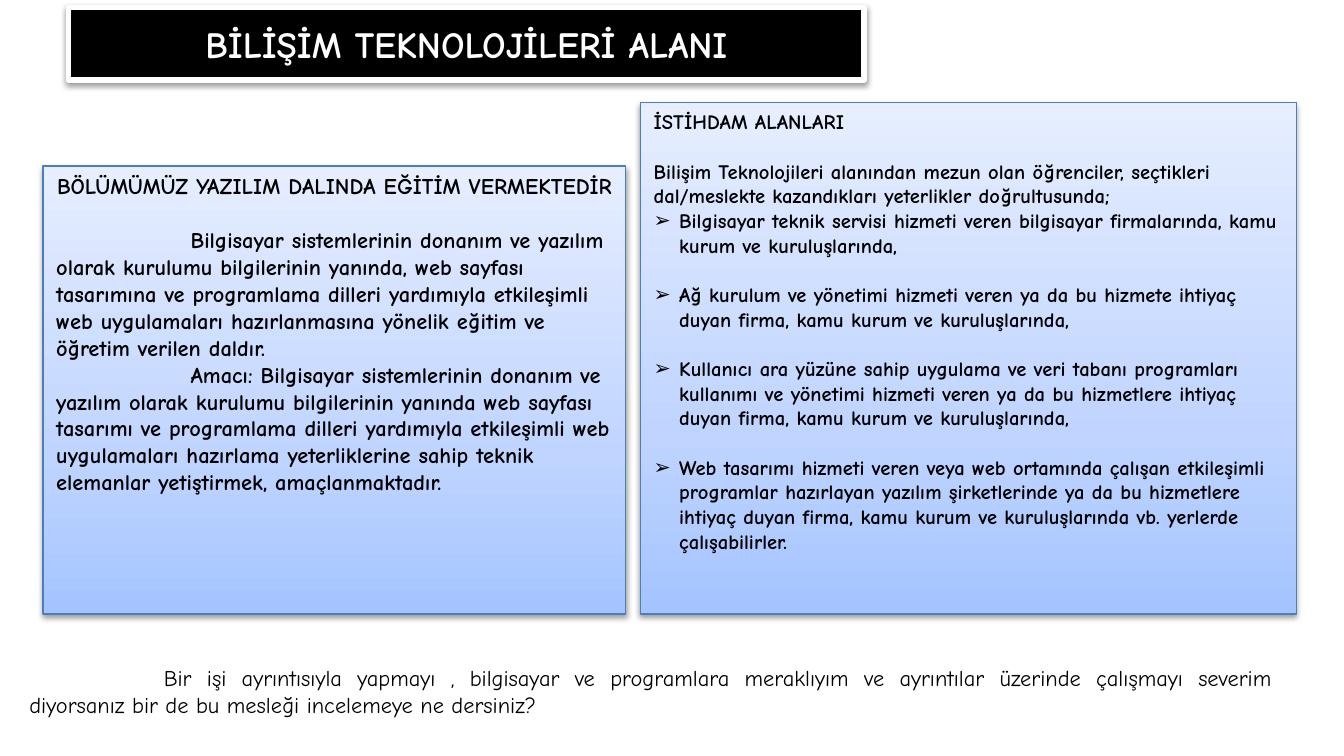
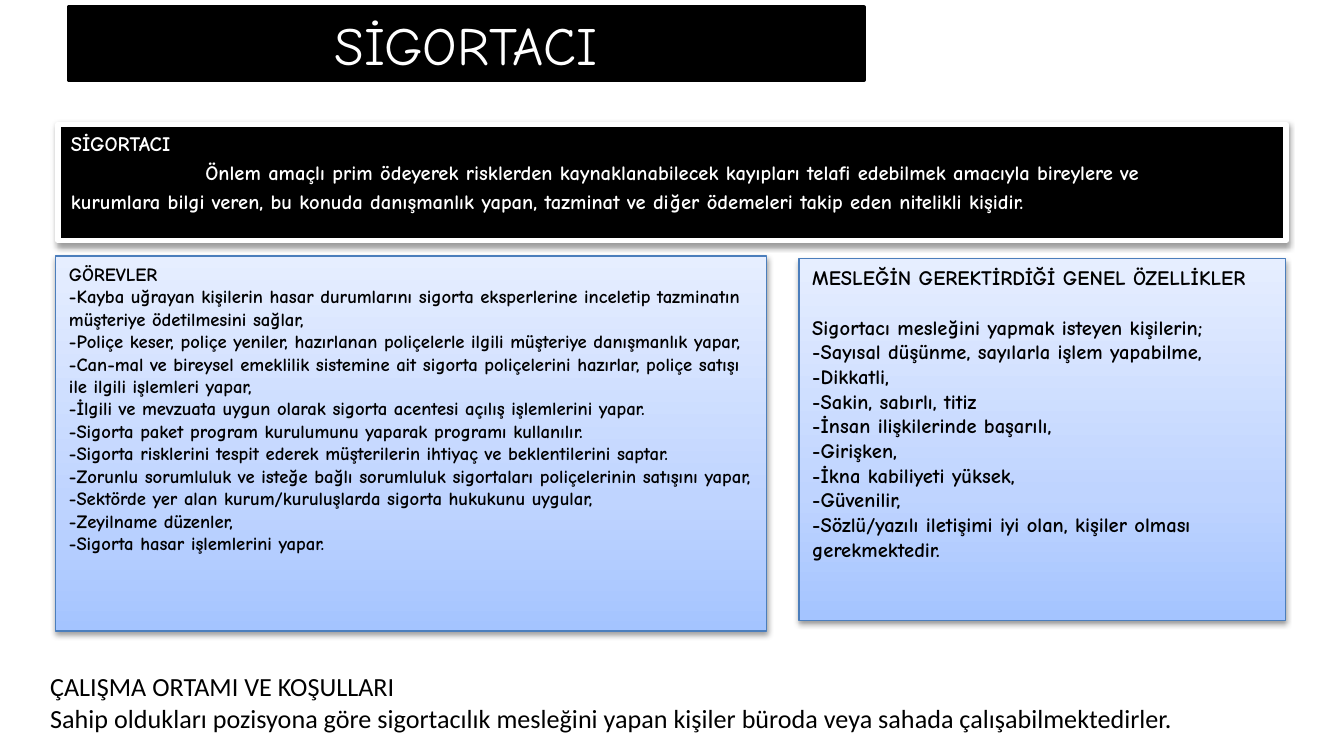
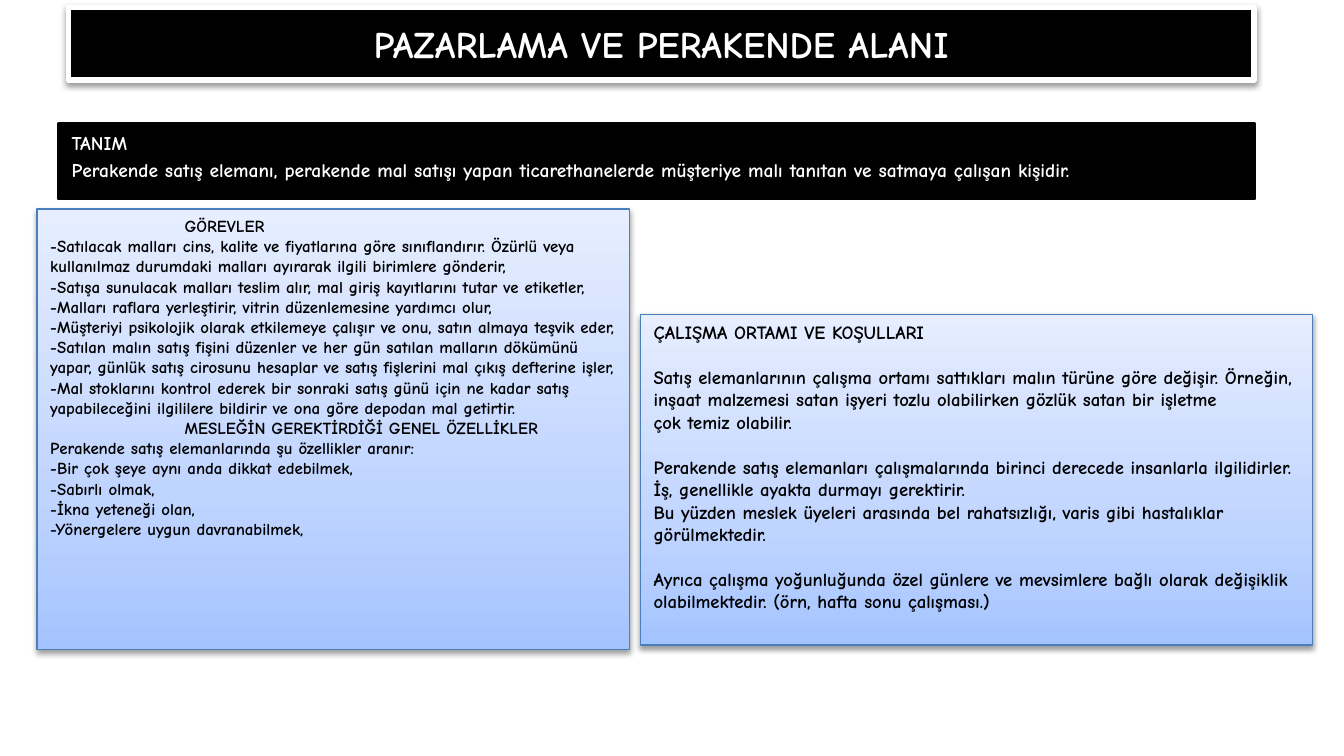
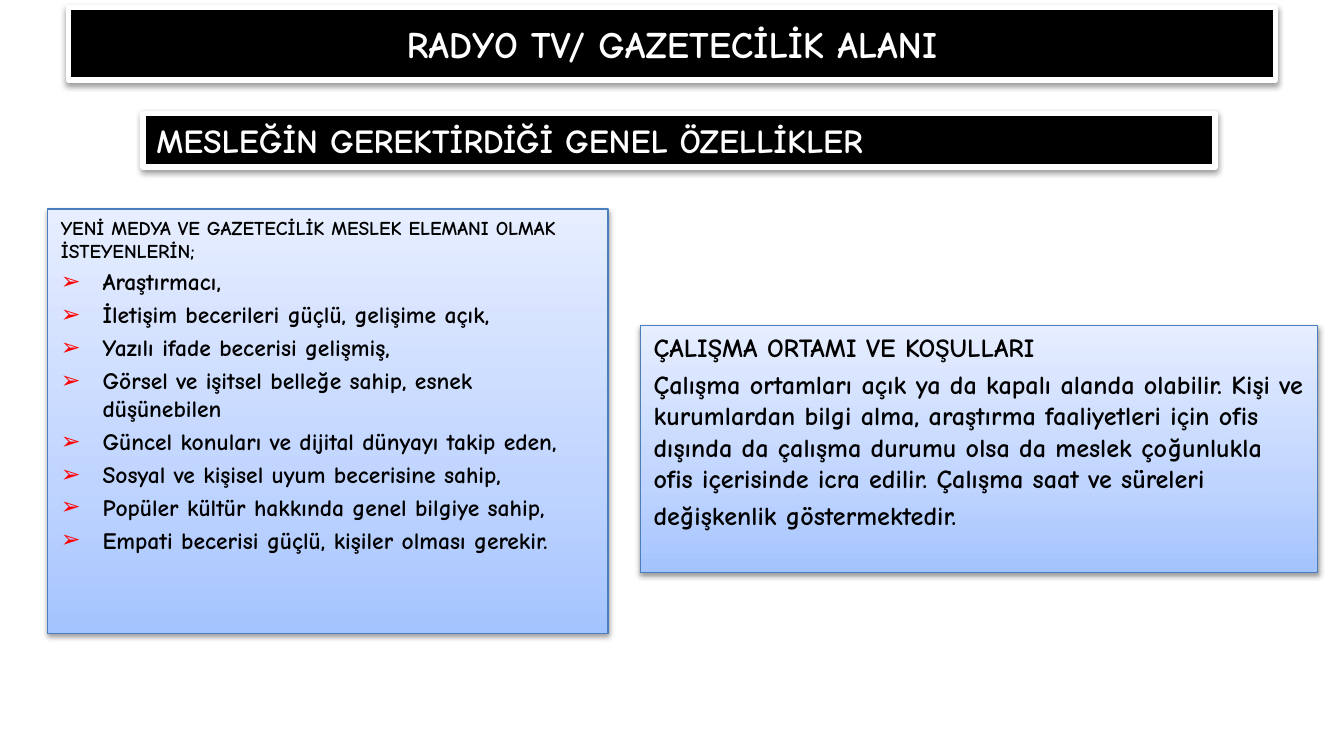
from dataclasses import dataclass
from typing import Optional

from lxml import etree
from pptx import Presentation
from pptx.dml.color import RGBColor
from pptx.enum.shapes import MSO_SHAPE
from pptx.enum.text import MSO_ANCHOR, PP_ALIGN
from pptx.oxml import parse_xml
from pptx.oxml.ns import nsdecls, qn
from pptx.util import Emu, Pt

RECT = MSO_SHAPE.RECTANGLE
TOP, MIDDLE = MSO_ANCHOR.TOP, MSO_ANCHOR.MIDDLE
LEFT, CENTER, JUSTIFY = PP_ALIGN.LEFT, PP_ALIGN.CENTER, PP_ALIGN.JUSTIFY

PX = 4572  # EMU in one px: 200 px to the inch
SLIDE_W, SLIDE_H = 2000, 1125


@dataclass(frozen=True)
class Theme:
    font: str = "Comic Neue"
    plain_font: str = "Calibri"
    black: str = "000000"
    white: str = "FFFFFF"
    edge: str = "4B7EBC"
    bullet: str = "FF0000"
    gradient: tuple = ((0, "A4C4FF"), (35, "BFD4FF"), (100, "E6EEFF"))
    title_size: float = 20
    big_title_size: float = 28.8
    tab: int = 200
    blank_line: float = 1.2  # space before, as a share of the type size
    loose: float = 0.2


THEME = Theme()


@dataclass(frozen=True)
class Style:
    """Frame of a block; without a fill colour the gradient is used."""
    fill: Optional[str]
    line: str
    width: float
    ink: str
    shadow: bool = True


FRAMED = Style(THEME.black, THEME.white, 3, THEME.white)
FLAT = Style(THEME.black, THEME.black, 2, THEME.white, shadow=False)
PANEL = Style(None, THEME.edge, 0.75, THEME.black)


@dataclass(frozen=True)
class Para:
    text: str
    before: Optional[float] = None
    first: int = 0
    hang: int = 0
    bullet_color: Optional[str] = None
    size: Optional[float] = None
    align: PP_ALIGN = LEFT


@dataclass(frozen=True)
class Block:
    box: tuple
    paras: tuple
    size: float
    style: Optional[Style] = PANEL
    before: float = 0
    bold: bool = True
    font: str = THEME.font
    anchor: MSO_ANCHOR = TOP


def spaced(text: str) -> Para:
    """Paragraph set one line below the one above."""
    return Para(text, before=THEME.blank_line)


def tabbed(text: str, **fmt) -> Para:
    return Para(text, first=THEME.tab, **fmt)


def title(text: str, width: int, style: Style = FRAMED,
          size: float = THEME.title_size, bold: bool = True) -> Block:
    return Block((102, 11, width, 108), (Para(text, align=CENTER),), size, style,
                 bold=bold, anchor=MIDDLE)


def add_text(p, text: str, *, font: str, size: float, color: str, bold: bool) -> None:
    r = p.add_run()
    r.text = text
    r.font.name = font
    r.font.size = Pt(size)
    r.font.bold = bold
    r.font.color.rgb = RGBColor.from_string(color)


def add_bullet(p, hang: int, color: Optional[str]) -> None:
    pPr = p._p.get_or_add_pPr()
    pPr.set("marL", str(hang * PX))
    pPr.set("indent", str(-hang * PX))
    if color:
        clr = etree.SubElement(pPr, qn("a:buClr"))
        etree.SubElement(clr, qn("a:srgbClr")).set("val", color)
    etree.SubElement(pPr, qn("a:buFont")).set("typeface", THEME.plain_font)
    etree.SubElement(pPr, qn("a:buChar")).set("char", "➢")


def add_gradient(spPr) -> None:
    stops = "".join(f'<a:gs pos="{pos * 1000}"><a:srgbClr val="{color}"/></a:gs>'
                    for pos, color in THEME.gradient)
    grad = parse_xml(f'<a:gradFill {nsdecls("a")} rotWithShape="1"><a:gsLst>{stops}'
                     '</a:gsLst><a:lin ang="16200000" scaled="0"/></a:gradFill>')
    spPr.insert_element_before(grad, "a:ln", "a:effectLst")


def add_shadow(spPr) -> None:
    spPr.find(qn("a:effectLst")).append(parse_xml(
        f'<a:outerShdw {nsdecls("a")} blurRad="{Pt(3.1)}" dist="{Pt(1.6)}" '
        f'dir="5400000" rotWithShape="0"><a:srgbClr val="{THEME.black}">'
        '<a:alpha val="38000"/></a:srgbClr></a:outerShdw>'))


def add_frame(slide, box: list, style: Style):
    s = slide.shapes.add_shape(RECT, *box)
    s.shadow.inherit = False
    if style.fill:
        s.fill.solid()
        s.fill.fore_color.rgb = RGBColor.from_string(style.fill)
    else:
        add_gradient(s.element.spPr)
    s.line.color.rgb = RGBColor.from_string(style.line)
    s.line.width = Pt(style.width)
    if style.shadow:
        add_shadow(s.element.spPr)
    return s


def add_block(slide, block: Block) -> None:
    box = [Emu(v * PX) for v in block.box]
    s = add_frame(slide, box, block.style) if block.style else slide.shapes.add_textbox(*box)
    tf = s.text_frame
    tf.word_wrap = True
    tf.vertical_anchor = block.anchor
    for i, para in enumerate(block.paras):
        p = tf.add_paragraph() if i else tf.paragraphs[0]
        size = para.size or block.size
        p.alignment = para.align
        if para.hang:
            add_bullet(p, para.hang, para.bullet_color)
        if para.first:
            p._p.get_or_add_pPr().set("indent", str(para.first * PX))
        before = block.before if para.before is None else para.before
        if i and before:
            p.space_before = Pt(round(before * size, 1))
        add_text(p, para.text, font=block.font, size=size, bold=block.bold,
                 color=block.style.ink if block.style else THEME.black)


def paras(*texts: str) -> tuple:
    return tuple(Para(text) for text in texts)


JOB_FIELDS = (
    "Bilgisayar teknik servisi hizmeti veren bilgisayar firmalarında, kamu kurum ve kuruluşlarında,",
    "Ağ kurulum ve yönetimi hizmeti veren ya da bu hizmete ihtiyaç duyan firma, kamu kurum ve kuruluşlarında,",
    "Kullanıcı ara yüzüne sahip uygulama ve veri tabanı programları kullanımı ve yönetimi hizmeti veren ya da bu hizmetlere ihtiyaç duyan firma, kamu kurum ve kuruluşlarında,",
    "Web tasarımı hizmeti veren veya web ortamında çalışan etkileşimli programlar hazırlayan yazılım şirketlerinde ya da bu hizmetlere ihtiyaç duyan firma, kamu kurum ve kuruluşlarında vb. yerlerde çalışabilirler.",
)
MEDIA_TRAITS = (
    "Araştırmacı,",
    "İletişim becerileri güçlü, gelişime açık,",
    "Yazılı ifade becerisi gelişmiş,",
    "Görsel ve işitsel belleğe sahip, esnek düşünebilen",
    "Güncel konuları ve dijital dünyayı takip eden,",
    "Sosyal ve kişisel uyum becerisine sahip,",
    "Popüler kültür hakkında genel bilgiye sahip,",
    "Empati becerisi güçlü, kişiler olması gerekir.",
)

IT_FIELD = (
    title("BİLİŞİM TEKNOLOJİLERİ ALANI", 1184, size=19.8),
    Block((64, 247, 867, 667), (
        Para("BÖLÜMÜMÜZ YAZILIM DALINDA EĞİTİM VERMEKTEDİR", align=CENTER),
        tabbed("Bilgisayar sistemlerinin donanım ve yazılım olarak kurulumu bilgilerinin yanında, web sayfası tasarımına ve programlama dilleri yardımıyla etkileşimli web uygulamaları hazırlanmasına yönelik eğitim ve öğretim verilen daldır.",
               before=THEME.blank_line),
        tabbed("Amacı: Bilgisayar sistemlerinin donanım ve yazılım olarak kurulumu bilgilerinin yanında web sayfası tasarımı ve programlama dilleri yardımıyla etkileşimli web uygulamaları hazırlama yeterliklerine sahip teknik elemanlar yetiştirmek, amaçlanmaktadır."),
    ), 12),
    Block((953, 153, 976, 761), (
        Para("İSTİHDAM ALANLARI"),
        spaced("Bilişim Teknolojileri alanından mezun olan öğrenciler, seçtikleri dal/meslekte kazandıkları yeterlikler doğrultusunda;"),
        *(Para(text, before=THEME.blank_line if i else 0, hang=38)
          for i, text in enumerate(JOB_FIELDS)),
    ), 11),
    Block((24, 979, 1890, 100), (
        tabbed("Bir işi ayrıntısıyla yapmayı , bilgisayar ve programlara meraklıyım ve ayrıntılar üzerinde çalışmayı severim diyorsanız bir de bu mesleği incelemeye ne dersiniz?",
               align=JUSTIFY),
    ), 12, style=None, bold=False),
)

INSURER = (
    title("SİGORTACI", 1184, FLAT, THEME.big_title_size, bold=False),
    Block((55, 988, 1732, 114), paras(
        "ÇALIŞMA ORTAMI VE KOŞULLARI",
        "Sahip oldukları pozisyona göre sigortacılık mesleğini yapan kişiler büroda veya sahada çalışabilmektedirler.",
    ), 14, style=None, bold=False, font=THEME.plain_font),
    Block((86, 185, 1828, 173), (
        Para("SİGORTACI"),
        tabbed("Önlem amaçlı prim ödeyerek risklerden kaynaklanabilecek kayıpları telafi edebilmek amacıyla bireylere ve"),
        Para("kurumlara bilgi veren, bu konuda danışmanlık yapan, tazminat ve diğer ödemeleri takip eden nitelikli kişidir."),
    ), 11, FRAMED, before=THEME.loose),
    Block((83, 381, 1058, 558), paras(
        "GÖREVLER",
        "-Kayba uğrayan kişilerin hasar durumlarını sigorta eksperlerine inceletip tazminatın müşteriye ödetilmesini sağlar,",
        "-Poliçe keser, poliçe yeniler, hazırlanan poliçelerle ilgili müşteriye danışmanlık yapar,",
        "-Can-mal ve bireysel emeklilik sistemine ait sigorta poliçelerini hazırlar, poliçe satışı ile ilgili işlemleri yapar,",
        "-İlgili ve mevzuata uygun olarak sigorta acentesi açılış işlemlerini yapar.",
        "-Sigorta paket program kurulumunu yaparak programı kullanılır.",
        "-Sigorta risklerini tespit ederek müşterilerin ihtiyaç ve beklentilerini saptar.",
        "-Zorunlu sorumluluk ve isteğe bağlı sorumluluk sigortaları poliçelerinin satışını yapar,",
        "-Sektörde yer alan kurum/kuruluşlarda sigorta hukukunu uygular,",
        "-Zeyilname düzenler,",
        "-Sigorta hasar işlemlerini yapar.",
    ), 10),
    Block((1189, 385, 724, 538), (
        Para("MESLEĞİN GEREKTİRDİĞİ GENEL ÖZELLİKLER"),
        spaced("Sigortacı mesleğini yapmak isteyen kişilerin;"),
        *paras(
            "-Sayısal düşünme, sayılarla işlem yapabilme,",
            "-Dikkatli,",
            "-Sakin, sabırlı, titiz",
            "-İnsan ilişkilerinde başarılı,",
            "-Girişken,",
            "-İkna kabiliyeti yüksek,",
            "-Güvenilir,",
            "-Sözlü/yazılı iletişimi iyi olan, kişiler olması gerekmektedir.",
        ),
    ), 11),
)

RETAIL_FIELD = (
    Block((87, 185, 1780, 110), paras(
        "TANIM",
        "Perakende satış elemanı, perakende mal satışı yapan ticarethanelerde müşteriye malı tanıtan ve satmaya çalışan kişidir.",
    ), 10.4, FLAT, before=THEME.loose),
    title("PAZARLAMA VE PERAKENDE ALANI", 1764),
    Block((55, 311, 882, 656), (
        tabbed("GÖREVLER"),
        *paras(
            "-Satılacak malları cins, kalite ve fiyatlarına göre sınıflandırır. Özürlü veya kullanılmaz durumdaki malları ayırarak ilgili birimlere gönderir,",
            "-Satışa sunulacak malları teslim alır, mal giriş kayıtlarını tutar ve etiketler,",
            "-Malları raflara yerleştirir, vitrin düzenlemesine yardımcı olur,",
            "-Müşteriyi psikolojik olarak etkilemeye çalışır ve onu, satın almaya teşvik eder,",
            "-Satılan malın satış fişini düzenler ve her gün satılan malların dökümünü yapar, günlük satış cirosunu hesaplar ve satış fişlerini mal çıkış defterine işler,",
            "-Mal stoklarını kontrol ederek bir sonraki satış günü için ne kadar satış yapabileceğini ilgililere bildirir ve ona göre depodan mal getirtir.",
        ),
        tabbed("MESLEĞİN GEREKTİRDİĞİ GENEL ÖZELLİKLER"),
        *paras(
            "Perakende satış elemanlarında şu özellikler aranır:",
            "-Bir çok şeye aynı anda dikkat edebilmek,",
            "-Sabırlı olmak,",
            "-İkna yeteneği olan,",
            "-Yönergelere uygun davranabilmek,",
        ),
    ), 9),
    Block((953, 468, 1000, 492), (
        Para("ÇALIŞMA ORTAMI VE KOŞULLARI"),
        spaced("Satış elemanlarının çalışma ortamı sattıkları malın türüne göre değişir. Örneğin, inşaat malzemesi satan işyeri tozlu olabilirken gözlük satan bir işletme"),
        Para("çok temiz olabilir."),
        spaced("Perakende satış elemanları çalışmalarında birinci derecede insanlarla ilgilidirler. İş, genellikle ayakta durmayı gerektirir."),
        Para("Bu yüzden meslek üyeleri arasında bel rahatsızlığı, varis gibi hastalıklar görülmektedir."),
        spaced("Ayrıca çalışma yoğunluğunda özel günlere ve mevsimlere bağlı olarak değişiklik olabilmektedir. (örn, hafta sonu çalışması.)"),
    ), 10),
)

MEDIA_FIELD = (
    title("RADYO TV/ GAZETECİLİK ALANI", 1796),
    Block((71, 311, 834, 632), (
        Para("YENİ MEDYA VE GAZETECİLİK MESLEK ELEMANI OLMAK İSTEYENLERİN;", size=10.5),
        *(Para(text, hang=62, bullet_color=THEME.bullet) for text in MEDIA_TRAITS),
    ), 12.6, before=THEME.loose),
    Block((213, 169, 1595, 80), paras("MESLEĞİN GEREKTİRDİĞİ GENEL ÖZELLİKLER"), 18, FRAMED),
    Block((953, 484, 1008, 368), paras(
        "ÇALIŞMA ORTAMI VE KOŞULLARI",
        "Çalışma ortamları açık ya da kapalı alanda olabilir. Kişi ve kurumlardan bilgi alma, araştırma faaliyetleri için ofis dışında da çalışma durumu olsa da meslek çoğunlukla ofis içerisinde icra edilir. Çalışma saat ve süreleri",
        "değişkenlik göstermektedir.",
    ), 14, before=THEME.loose),
)


def main() -> None:
    prs = Presentation()
    prs.slide_width, prs.slide_height = Emu(SLIDE_W * PX), Emu(SLIDE_H * PX)
    blank = prs.slide_layouts[6]
    for blocks in (IT_FIELD, INSURER, RETAIL_FIELD, MEDIA_FIELD):
        slide = prs.slides.add_slide(blank)
        for block in blocks:
            add_block(slide, block)
    prs.save("out.pptx")


if __name__ == "__main__":
    main()
